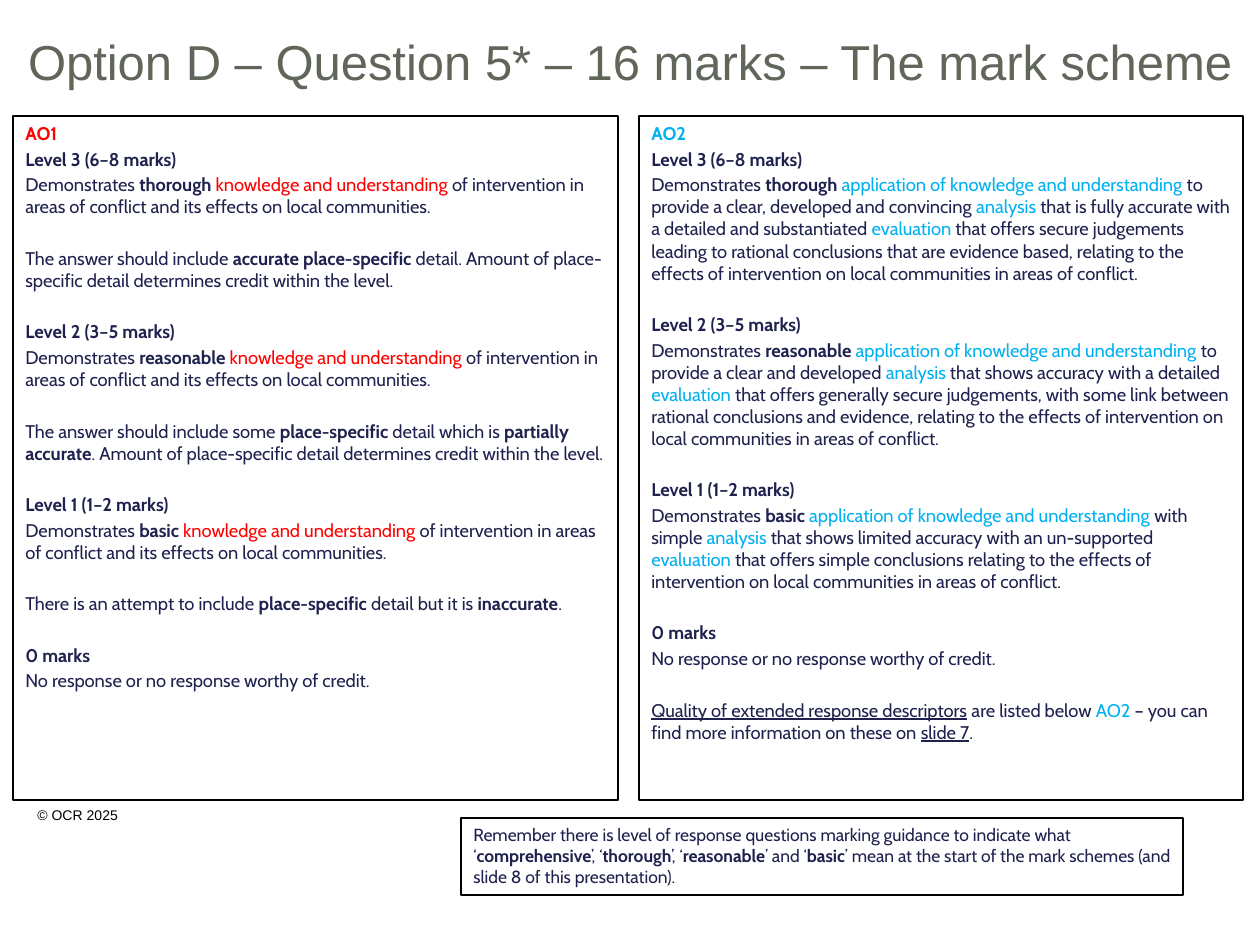
from pptx import Presentation
from pptx.dml.color import RGBColor
from pptx.enum.shapes import MSO_SHAPE
from pptx.enum.text import MSO_ANCHOR, PP_ALIGN
from pptx.util import Emu, Pt

SCALE = 914400 / 126
NAVY, RED, BLUE = "1F224E", "FF0000", "00B0F0"
STYLES = {
    "": {},
    "*": {"bold": True},
    "_": {"underline": True},
    "~": {},
    "#": {"bold": True},
}


def rgb(value):
    return RGBColor.from_string(value)


def add_box(box, groups, size, accent=NAVY, color=NAVY, font="Cabin", framed=True):
    s = slide.shapes.add_shape(MSO_SHAPE.RECTANGLE, *[Emu(int(v * SCALE)) for v in box])
    s.shadow.inherit = False
    if framed:
        s.fill.solid()
        s.fill.fore_color.rgb = rgb("FFFFFF")
        s.line.color.rgb = rgb("000000")
        s.line.width = Pt(0.75)
    else:
        s.fill.background()
        s.line.fill.background()
    tf = s.text_frame
    tf.word_wrap = True
    tf.vertical_anchor = MSO_ANCHOR.TOP
    p = None
    for group in groups:
        for i, line in enumerate(group):
            if p is None:
                p = tf.paragraphs[0]
            else:
                p = tf.add_paragraph()
                p.space_before = Pt(2.1 if i else 16.8)
            p.alignment = PP_ALIGN.LEFT
            for piece in line.split("|"):
                mark = piece[0] if piece[0] in STYLES else ""
                r = p.add_run()
                r.text = piece[len(mark):]
                values = {"name": font, "size": Pt(size), "bold": False, **STYLES[mark]}
                for name, value in values.items():
                    setattr(r.font, name, value)
                r.font.color.rgb = rgb(accent if mark in ("~", "#") else color)
    return tf


prs = Presentation()
prs.slide_width, prs.slide_height = Emu(int(1260 * SCALE)), Emu(int(945 * SCALE))
slide = prs.slides.add_slide(prs.slide_layouts[6])

add_box((25, 800, 238, 30), [["© OCR 2025"]], 8, color="000000", font="Arial", framed=False)
tf = add_box((0, 24, 1260, 74), [["Option D – Question 5* – 16 marks – The mark scheme"]],
             28, color="60665A", font="Arial", framed=False)
tf.vertical_anchor = MSO_ANCHOR.MIDDLE
tf.paragraphs[0].alignment = PP_ALIGN.CENTER

levels = [("*Level 3 (6–8 marks)", "Demonstrates |*thorough |~"),
          ("*Level 2 (3–5 marks)", "Demonstrates |*reasonable |~"),
          ("*Level 1 (1–2 marks)", "Demonstrates |*basic |~")]
zero = ["*0 marks", "No response or no response worthy of credit."]

knowledge = ("knowledge and understanding |of intervention in areas of conflict "
             "and its effects on local communities.")
credit = "Amount of place-specific detail determines credit within the level."
details = [
    "The answer should include |*accurate place-specific| detail. " + credit,
    "The answer should include some|* place-specific |detail which is "
    "|*partially accurate|. " + credit,
    "There is an attempt to include |*place-specific| detail but it is |*inaccurate|.",
]
ao1 = []
for (heading, opening), detail in zip(levels, details):
    ao1 += [[heading, opening + knowledge], [detail]]
ao1[0].insert(0, "#AO1")
add_box((13, 116, 605, 684), ao1 + [zero], 10.5, RED)

application = "application of knowledge and understanding| "
effects = "the effects of intervention on local communities in areas of conflict."
criteria = [
    "to provide a clear, developed and convincing |~analysis| that is fully accurate "
    "with a detailed and substantiated |~evaluation| that offers secure judgements "
    "leading to rational conclusions that are evidence based, relating to ",
    "to provide a clear and developed |~analysis| that shows accuracy with a detailed "
    "|~evaluation| that offers generally secure judgements, with some link between "
    "rational conclusions and evidence, relating to ",
    "with simple |~analysis| that shows limited accuracy with an un-supported "
    "|~evaluation| that offers simple conclusions relating to ",
]
ao2 = [[heading, opening + application + text + effects]
       for (heading, opening), text in zip(levels, criteria)]
ao2[0].insert(0, "#AO2")
quality = ["_Quality of extended response descriptors| are listed below |~AO2"
           "| – you can find more information on these on |_slide 7|."]
add_box((639, 116, 604, 684), ao2 + [zero, quality], 10.5, BLUE)

reminder = ("Remember there is level of response questions marking guidance to indicate what ‘"
            "|*comprehensive|’, ‘|*thorough|’, ‘|*reasonable|’ and ‘|*basic|’ mean at the start "
            "of the mark schemes (and slide 8 of this presentation).")
add_box((461, 818, 722, 77), [[reminder]], 10)

prs.save("out.pptx")
